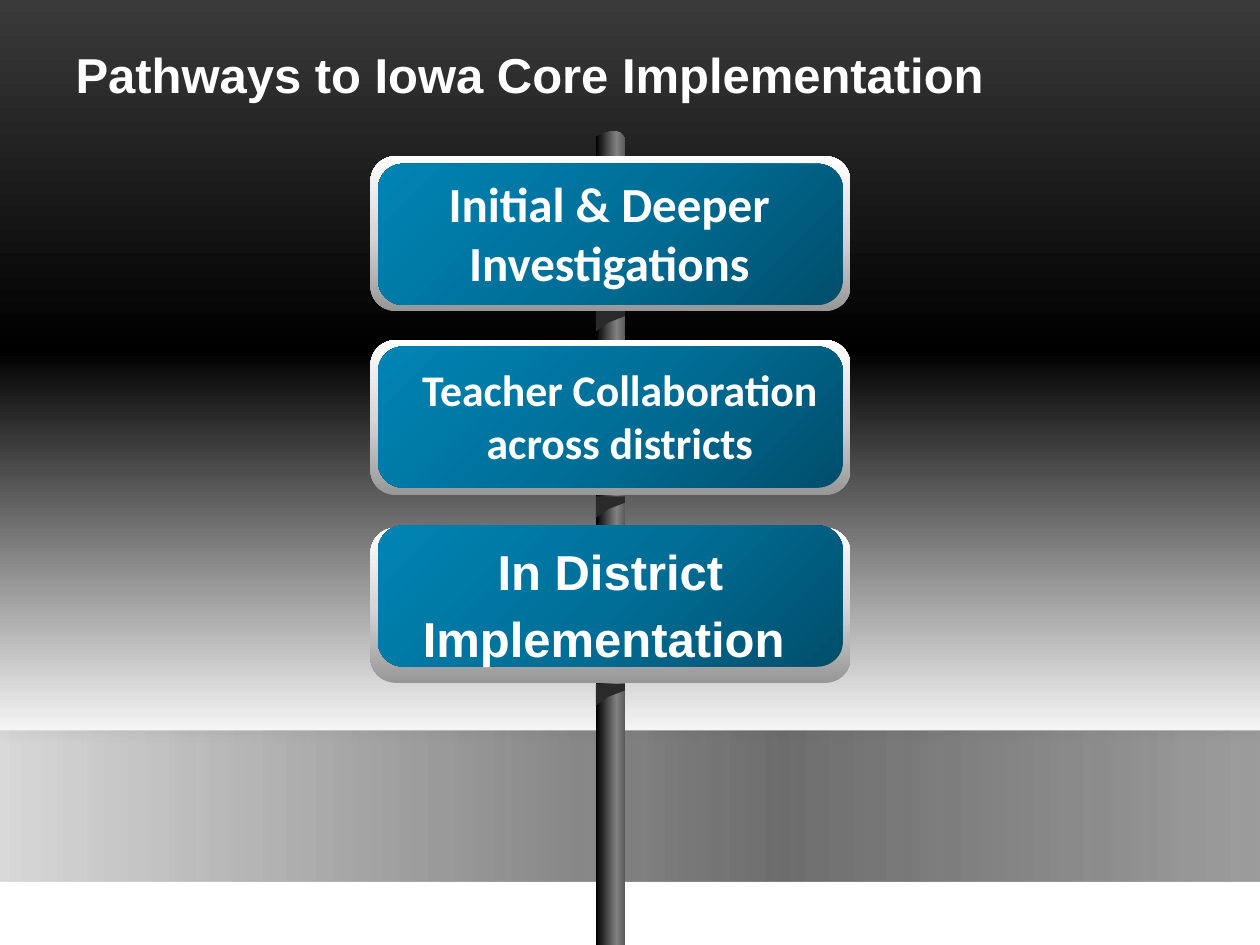
from lxml import etree
from pptx import Presentation
from pptx.dml.color import RGBColor
from pptx.enum import shapes, text
from pptx.oxml import ns
from pptx.util import Inches, Pt

POST = [(0, "5B5B5B"), (29, "818181"), (100, "000000")]
RIM = [(0, "979797"), (50, "D7D7D7"), (100, "FFFFFF")]
FACE = [(0, "004E6B"), (50, "006F98"), (100, "0084B4")]
SKY = [(0, "3A3A3A"), (37, "000000"), (79, "FFFFFF")]
FLOOR = [(0, "1C1C1C", 16), (62, "2A2A2A", 68), (100, "2A2A2A", 45)]
LEFT, RIGHT = 4.73, 4.96


def color(code):
    """Turn a hex string into a colour."""
    return RGBColor.from_string(code)


def blend(owner, fill, stops, angle):
    """Give the owner's fill a linear gradient of (place, colour, opacity) stops."""
    fill.gradient()
    grad = next(owner.element.iter(ns.qn("a:gradFill")))
    grad.find(ns.qn("a:lin")).set("ang", str(angle * 60000))
    group = grad.find(ns.qn("a:gsLst"))
    for old in list(group):
        group.remove(old)
    for place, code, *alpha in stops:
        stop = etree.SubElement(group, ns.qn("a:gs"), pos=str(place * 1000))
        tint = etree.SubElement(stop, ns.qn("a:srgbClr"), val=code)
        if alpha:
            etree.SubElement(tint, ns.qn("a:alpha"), val=str(alpha[0] * 1000))


def plain(shape):
    """Remove the line and shadow of a shape."""
    shape.line.fill.background()
    shape.shadow.inherit = False
    return shape


def block(slide, kind, box, stops, angle):
    """Add a preset shape with a gradient."""
    shape = plain(slide.shapes.add_shape(kind, *map(Inches, box)))
    blend(shape, shape.fill, stops, angle)
    return shape


def outline(slide, points):
    """Add a closed outline through the points."""
    start, *rest = [(Inches(x), Inches(y)) for x, y in points]
    maker = slide.shapes.build_freeform(*start)
    maker.add_line_segments(rest, close=True)
    return plain(maker.convert_to_shape())


def shade(slide, top):
    """Add the shadow that a sign casts on the post."""
    shape = outline(slide, [(LEFT, top), (RIGHT, top), (RIGHT, top + 0.05),
                            (4.83, top + 0.1), (LEFT, top + 0.17)])
    shape.fill.solid()
    shape.fill.fore_color.rgb = color("2A2A2A")


def plate(slide, box, stops, angle):
    """Add a rounded plate of a sign."""
    shape = block(slide, shapes.MSO_SHAPE.ROUNDED_RECTANGLE, box, stops, angle)
    shape.adjustments[0] = 0.2 / box[3]
    return shape


def write(frame, lines, size, font, align):
    """Fill a text frame with bold white paragraphs."""
    frame.word_wrap = True
    frame.text = "\n".join(lines)
    for para in frame.paragraphs:
        para.alignment = align
        para.font.size = Pt(size)
        para.font.name = font
        para.font.bold = True
        para.font.color.rgb = color("FFFFFF")


def label(slide, box, lines, size):
    """Add a centred text box over a sign."""
    frame = slide.shapes.add_textbox(*map(Inches, box)).text_frame
    write(frame, lines, size, "Calibri", text.PP_ALIGN.CENTER)
    frame.auto_size = text.MSO_AUTO_SIZE.SHAPE_TO_FIT_TEXT


def head(slide, words):
    """Place and format the title."""
    title = slide.shapes.title
    title.left, title.top, title.width, title.height = map(
        Inches, (0.5, 0.25, 7.5, 0.67))
    write(title.text_frame, [words], 28, "Arial", text.PP_ALIGN.LEFT)
    title.text_frame.vertical_anchor = text.MSO_ANCHOR.MIDDLE


def main():
    """Build the slide and save it."""
    deck = Presentation()
    deck.slide_width, deck.slide_height = Inches(10), Inches(7.5)
    slide = deck.slides.add_slide(deck.slide_layouts[5])
    blend(slide, slide.background.fill, SKY, 90)
    head(slide, "Pathways to Iowa Core Implementation")
    block(slide, shapes.MSO_SHAPE.RECTANGLE, (0, 5.8, 10, 1.2), FLOOR, 0)
    post = outline(slide, [(LEFT, 7.5), (LEFT, 1.09), (4.79, 1.06), (4.86, 1.04),
                           (4.92, 1.05), (RIGHT, 1.09), (RIGHT, 7.5)])
    blend(post, post.fill, POST, 180)
    for top in (2.46, 3.94, 5.43):
        shade(slide, top)
    for rim, top in ((1.24, 1.3), (2.7, 2.75), (4.19, 4.17)):
        plate(slide, (2.94, rim, 3.81, 1.23), RIM, 270)
        face = plate(slide, (3, top, 3.69, 1.12), FACE, 225)
    frame = face.text_frame
    write(frame, ["In District Implementation "], 28, "Arial", text.PP_ALIGN.CENTER)
    frame.vertical_anchor = text.MSO_ANCHOR.TOP
    frame.margin_left = frame.margin_right = Inches(0.04)
    frame.margin_top = 0
    frame.paragraphs[0].line_spacing = 1.14
    frame.paragraphs[0].space_before = Pt(12)
    label(slide, (3, 1.33, 3.67, 1.38), ["Initial & Deeper", "Investigations"], 28)
    label(slide, (3.17, 2.83, 3.5, 1.28), ["Teacher Collaboration across districts"], 25)
    deck.save("out.pptx")


if __name__ == "__main__":
    main()
